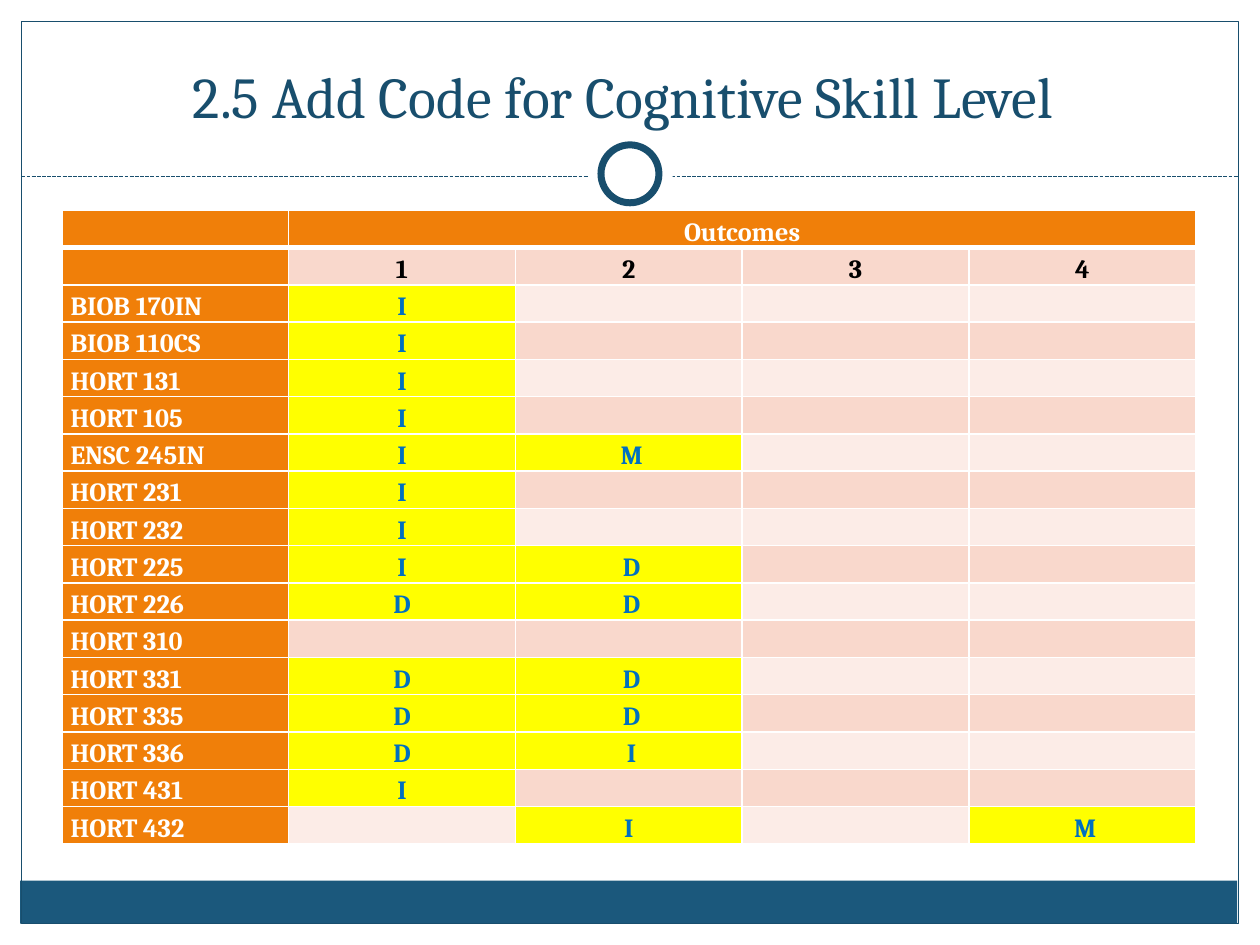
from dataclasses import dataclass
from typing import NamedTuple, Optional

from lxml.etree import SubElement
from pptx import Presentation
from pptx.dml.color import RGBColor
from pptx.enum.dml import MSO_LINE
from pptx.enum.shapes import MSO_CONNECTOR, MSO_SHAPE
from pptx.enum.text import MSO_ANCHOR, PP_ALIGN
from pptx.oxml.ns import qn
from pptx.util import Inches, Pt


@dataclass(frozen=True)
class Theme:
    font: str = "Cambria"
    title_size: float = 33
    cell_size: float = 15
    white: str = "FFFFFF"
    black: str = "000000"
    navy: str = "184E6D"
    footer: str = "1B587C"
    header: str = "F07F09"
    dark_band: str = "F9D8CC"
    light_band: str = "FCECE7"
    marked: str = "FFFF00"
    code: str = "0070C0"


class Panel(NamedTuple):
    left: float
    top: float
    width: float
    height: float
    fill: Optional[str] = None
    line: Optional[str] = None
    line_width: float = 0.75
    kind: MSO_SHAPE = MSO_SHAPE.RECTANGLE


class Course(NamedTuple):
    name: str
    codes: tuple = ()


THEME = Theme()
TITLE = "2.5 Add Code for Cognitive Skill Level "
OUTCOMES = ("1", "2", "3", "4")
COURSES = [
    Course("BIOB 170IN", ("I",)),
    Course("BIOB 110CS", ("I",)),
    Course("HORT 131", ("I",)),
    Course("HORT 105", ("I",)),
    Course("ENSC 245IN", ("I", " M")),
    Course("HORT 231", ("I",)),
    Course("HORT 232", ("I",)),
    Course("HORT 225", ("I", " D")),
    Course("HORT 226", ("D", " D")),
    Course("HORT 310"),
    Course("HORT 331", ("D", " D")),
    Course("HORT 335", ("D", " D")),
    Course("HORT 336", ("D", " I")),
    Course("HORT 431", ("I",)),
    Course("HORT 432", ("", "I", "", " M")),
]
FRAME = [
    Panel(0, 0, 10, 1.52, THEME.white),
    Panel(0, 0, 0.17, 7.5, THEME.white),
    Panel(9.83, 0, 0.17, 7.5, THEME.white),
    Panel(0.16, 6.99, 9.66, 0.34, THEME.footer),
    Panel(0.17, 0.17, 9.66, 7.16, line=THEME.navy),
]
RING = [
    Panel(4.67, 1.05, 0.67, 0.67, THEME.white, kind=MSO_SHAPE.OVAL),
    Panel(4.77, 1.15, 0.46, 0.46, THEME.white, THEME.navy, 4, MSO_SHAPE.OVAL),
]
CELL_FORMAT = {
    "vertical_anchor": MSO_ANCHOR.BOTTOM,
    "margin_left": Inches(0.07),
    "margin_right": Inches(0.07),
    "margin_top": 0,
    "margin_bottom": 0,
}


def apply_format(target, values: dict) -> None:
    for name, value in values.items():
        setattr(target, name, value)


def draw_panel(slide, panel: Panel) -> None:
    box = slide.shapes.add_shape(panel.kind, *map(Inches, panel[:4]))
    box.shadow.inherit = False
    if panel.fill:
        box.fill.solid()
        box.fill.fore_color.rgb = RGBColor.from_string(panel.fill)
    else:
        box.fill.background()
    if panel.line:
        box.line.color.rgb = RGBColor.from_string(panel.line)
        box.line.width = Pt(panel.line_width)
    else:
        box.line.fill.background()


def draw_divider(slide, left: float, right: float, y: float) -> None:
    divider = slide.shapes.add_connector(
        MSO_CONNECTOR.STRAIGHT, Inches(left), Inches(y), Inches(right), Inches(y))
    apply_format(divider.line, {"width": Pt(0.75), "dash_style": MSO_LINE.SQUARE_DOT})
    divider.line.color.rgb = RGBColor.from_string(THEME.navy)
    SubElement(divider.element.spPr, qn("a:effectLst"))


def write_text(paragraph, text: str, size: float, color: str, bold: bool) -> None:
    run = paragraph.add_run()
    run.text = text
    apply_format(run.font, {"name": THEME.font, "size": Pt(size), "bold": bold})
    run.font.color.rgb = RGBColor.from_string(color)


def place_title(slide) -> None:
    title = slide.shapes.title
    # Bring the title in front of the frame
    title.element.getparent().append(title.element)
    apply_format(title, {"left": Inches(0.33), "top": Inches(0.25),
                         "width": Inches(9.33), "height": Inches(0.83)})
    apply_format(title.text_frame, {"vertical_anchor": MSO_ANCHOR.BOTTOM, "word_wrap": True})
    heading = title.text_frame.paragraphs[0]
    heading.alignment = PP_ALIGN.CENTER
    write_text(heading, TITLE, THEME.title_size, THEME.navy, False)


def set_borders(cell, row: int) -> None:
    properties = cell._tc.get_or_add_tcPr()
    thick_sides = {0: "lnB", 1: "lnT"}
    for side in ("lnL", "lnR", "lnT", "lnB"):
        width = 3 if thick_sides.get(row) == side else 1
        border = SubElement(properties, qn(f"a:{side}"), w=str(Pt(width)))
        SubElement(SubElement(border, qn("a:solidFill")), qn("a:srgbClr"), val=THEME.white)


def fill_cell(cell, row: int, column: int, text: str) -> None:
    # Choose the colours from the cell's role
    if row == 0 or column == 0:
        fill, color = THEME.header, THEME.white
    elif row > 1 and text:
        fill, color = THEME.marked, THEME.code
    else:
        fill, color = (THEME.dark_band if row % 2 else THEME.light_band), THEME.black
    set_borders(cell, row)
    apply_format(cell, CELL_FORMAT)
    cell.fill.solid()
    cell.fill.fore_color.rgb = RGBColor.from_string(fill)
    paragraph = cell.text_frame.paragraphs[0]
    if text:
        apply_format(paragraph, {"alignment": PP_ALIGN.CENTER if column else PP_ALIGN.LEFT,
                                 "line_spacing": 1.15})
        write_text(paragraph, text, THEME.cell_size, color, True)
    else:
        # Keep empty cells from stretching the row
        SubElement(paragraph._p, qn("a:endParaRPr"), sz=str(int(THEME.cell_size * 100)))


def draw_outcome_table(slide) -> None:
    rows = [("", "Outcomes"), ("", *OUTCOMES)]
    rows += [(course.name, *course.codes) for course in COURSES]
    column_count = len(OUTCOMES) + 1
    table = slide.shapes.add_table(len(rows), column_count, Inches(0.49), Inches(1.67),
                                   Inches(9), Inches(5.03)).table
    apply_format(table, {"first_row": False, "horz_banding": False})
    for row, texts in enumerate(rows):
        for column in range(column_count):
            text = texts[column] if column < len(texts) else ""
            fill_cell(table.cell(row, column), row, column, text)
    table.cell(0, 1).merge(table.cell(0, column_count - 1))


def main() -> None:
    deck = Presentation()
    apply_format(deck, {"slide_width": Inches(10), "slide_height": Inches(7.5)})
    slide = deck.slides.add_slide(deck.slide_layouts[5])
    # Frame, divider and ring
    for panel in FRAME:
        draw_panel(slide, panel)
    draw_divider(slide, 0.17, 9.83, 1.4)
    for panel in RING:
        draw_panel(slide, panel)
    # Content
    place_title(slide)
    draw_outcome_table(slide)
    deck.save("out.pptx")


if __name__ == "__main__":
    main()
